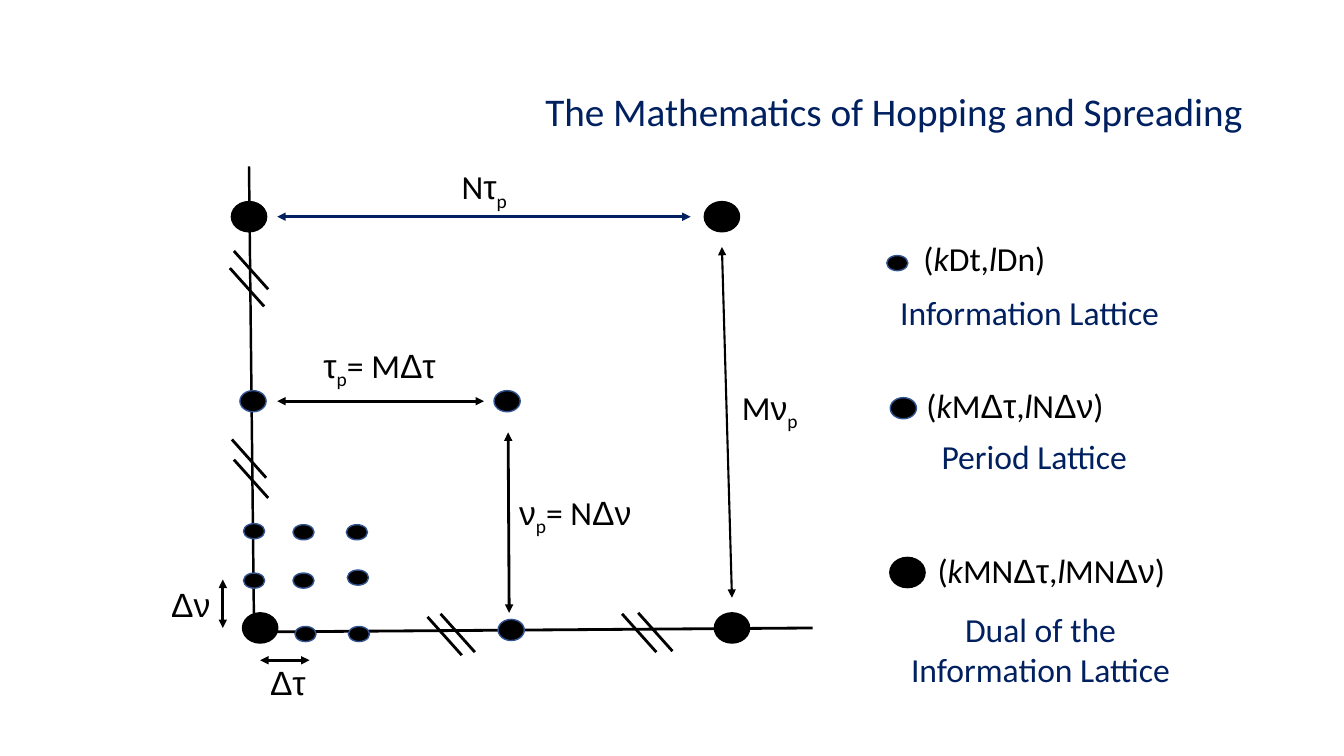
from dataclasses import dataclass

from lxml.etree import SubElement
from pptx import Presentation
from pptx.dml.color import RGBColor
from pptx.enum.shapes import MSO_CONNECTOR, MSO_SHAPE
from pptx.enum.text import MSO_ANCHOR, MSO_AUTO_SIZE, PP_ALIGN
from pptx.oxml.ns import qn
from pptx.util import Inches, Pt


@dataclass(frozen=True)
class Theme:
    navy: RGBColor = RGBColor.from_string("002060")
    black: RGBColor = RGBColor.from_string("000000")
    outline: RGBColor = RGBColor.from_string("325491")
    font: str = "Calibri"
    greek_font: str = "Arial"
    title_size: int = 28
    text_size: int = 24


@dataclass(frozen=True)
class Box:
    left: float
    top: float
    width: float
    height: float

    def point(self, x, y):
        return Inches(self.left + x), Inches(self.top + y)


THEME = Theme()
LABEL_HEIGHT = 0.5
BREAK_WIDTH, BREAK_HEIGHT = 0.34, 0.38
DOT_STYLES = {
    "information": (0.21, 0.15, THEME.outline),
    "period": (0.26, 0.21, THEME.outline),
    "dual": (0.35, 0.3, THEME.black),
}


def add_run(paragraph, text, style="plain", color=THEME.black, size=THEME.text_size):
    run = paragraph.add_run()
    run.text = text
    run.font.size = Pt(size)
    run.font.color.rgb = color
    run.font.name = THEME.greek_font if style == "greek" else THEME.font
    if style == "italic":
        run.font.italic = True
    if style == "subscript":
        run._r.get_or_add_rPr().set("baseline", "-25000")


def add_label(slide, box, x, y, width, runs, color=THEME.black,
              height=LABEL_HEIGHT, alignment=PP_ALIGN.LEFT):
    shape = slide.shapes.add_textbox(*box.point(x, y), Inches(width), Inches(height))
    frame = shape.text_frame
    frame.word_wrap = True
    frame.auto_size = MSO_AUTO_SIZE.SHAPE_TO_FIT_TEXT
    paragraph = frame.paragraphs[0]
    paragraph.alignment = alignment
    for text, style in runs:
        add_run(paragraph, text, style, color)


def add_line(slide, box, start, end, width=2, color=THEME.black, arrows=False):
    connector = slide.shapes.add_connector(
        MSO_CONNECTOR.STRAIGHT, *box.point(*start), *box.point(*end))
    connector.line.width = Pt(width)
    connector.line.color.rgb = color
    properties = connector._element.spPr
    if arrows:
        line = properties.find(qn("a:ln"))
        for tag in ("a:headEnd", "a:tailEnd"):
            SubElement(line, qn(tag), type="triangle")
    SubElement(properties, qn("a:effectLst"))


def add_dot(slide, box, center, lattice):
    width, height, outline = DOT_STYLES[lattice]
    x, y = center
    shape = slide.shapes.add_shape(
        MSO_SHAPE.OVAL, *box.point(x - width / 2, y - height / 2),
        Inches(width), Inches(height))
    shape.shadow.inherit = False
    shape.fill.solid()
    shape.fill.fore_color.rgb = THEME.black
    shape.line.color.rgb = outline
    shape.line.width = Pt(1)


def build_title(slide, box):
    title = slide.shapes.title
    title.left, title.top = box.point(0, 0)
    title.width, title.height = Inches(box.width), Inches(box.height)
    title.text_frame.word_wrap = True
    title.text_frame.vertical_anchor = MSO_ANCHOR.MIDDLE
    paragraph = title.text_frame.paragraphs[0]
    paragraph.alignment = PP_ALIGN.RIGHT
    paragraph.line_spacing = 0.9
    add_run(paragraph, "The Mathematics of Hopping and Spreading",
            color=THEME.navy, size=THEME.title_size)


def build_axes(slide, box):
    add_line(slide, box, (0.87, 0.05), (0.92, 4.65), 1.75)
    add_line(slide, box, (6.46, 4.63), (0.92, 4.67))
    breaks = [
        (0.72, 0.89), (0.68, 1.06), (0.7, 2.76), (0.72, 2.96),
        (2.64, 4.52), (2.77, 4.49), (4.57, 4.49), (4.73, 4.48),
    ]
    for x, y in breaks:
        add_line(slide, box, (x, y), (x + BREAK_WIDTH, y + BREAK_HEIGHT))


def build_lattice(slide, box):
    centers = {
        "dual": [(0.98, 4.63), (0.87, 0.55), (5.56, 0.55), (5.66, 4.63)],
        "period": [(0.91, 2.38), (3.43, 2.38), (3.47, 4.65)],
        "information": [
            (0.92, 3.67), (1.41, 3.68), (1.94, 3.68),
            (0.92, 4.16), (1.41, 4.16), (1.95, 4.13),
            (1.43, 4.69), (1.96, 4.69),
        ],
    }
    for lattice, points in centers.items():
        for center in points:
            add_dot(slide, box, center, lattice)


def build_dimensions(slide, box):
    arrows = [
        ((1.15, 0.55), (5.25, 0.55), 2, THEME.navy),
        ((5.56, 0.85), (5.66, 4.33), 1.5, THEME.black),
        ((1.15, 2.38), (3.2, 2.38), 2, THEME.black),
        ((3.44, 2.69), (3.45, 4.48), 2, THEME.black),
        ((0.61, 4.15), (0.61, 4.63), 2, THEME.black),
        ((0.98, 4.95), (1.47, 4.95), 2, THEME.black),
    ]
    for start, end, width, color in arrows:
        add_line(slide, box, start, end, width, color, arrows=True)
    subscript = ("p", "subscript")
    labels = [
        (2.88, 0, 0.89, [("N", "plain"), ("τ", "greek"), subscript]),
        (5.66, 2.19, 0.89, [("M", "plain"), ("ν", "greek"), subscript]),
        (1.51, 1.77, 1.45,
         [("τ", "greek"), subscript, ("= M", "plain"), ("Δτ", "greek")]),
        (3.45, 3.23, 1.72,
         [("ν", "greek"), subscript, ("= N", "plain"), ("Δν", "greek")]),
        (0, 4.14, 0.59, [("Δν", "greek")]),
        (0.98, 4.92, 0.65, [("Δτ", "greek")]),
    ]
    for x, y, width, runs in labels:
        add_label(slide, box, x, y, width, runs)


def lattice_formula(delay_factor, doppler_factor):
    return [
        ("(", "plain"), ("k", "italic"), (delay_factor, "plain"), ("Δτ", "greek"),
        (",", "plain"), ("l", "italic"), (doppler_factor, "plain"), ("Δν", "greek"),
        (")", "plain"),
    ]


def build_legend(slide, box):
    information_formula = [
        ("(", "plain"), ("k", "italic"), ("Dt,", "plain"),
        ("l", "italic"), ("Dn)", "plain"),
    ]
    entries = [
        ("information", (0.25, 0.31), (0.41, 0.01, 1.61), information_formula),
        ("period", (0.31, 1.75), (0.44, 1.47, 2.03), lattice_formula("M", "N")),
        ("dual", (0.35, 3.38), (0.55, 3.11, 2.71), lattice_formula("MN", "MN")),
    ]
    for lattice, center, place, formula in entries:
        add_dot(slide, box, center, lattice)
        add_label(slide, box, *place, formula)
    names = [
        ((0.18, 0.55, 2.91), "Information Lattice", LABEL_HEIGHT, PP_ALIGN.LEFT),
        ((0.59, 1.98, 2.15), "Period Lattice", LABEL_HEIGHT, PP_ALIGN.LEFT),
        ((0, 3.69, 3.34), "Dual of the Information Lattice", 0.91, PP_ALIGN.CENTER),
    ]
    for place, name, height, alignment in names:
        add_label(slide, box, *place, [(name, "plain")], THEME.navy, height, alignment)


def main():
    presentation = Presentation()
    presentation.slide_width = Inches(13.33)
    presentation.slide_height = Inches(7.5)
    slide = presentation.slides.add_slide(presentation.slide_layouts[5])
    diagram = Box(1.6, 1.6, 6.55, 5.42)
    build_title(slide, Box(5.05, 0.4, 7.37, 1.45))
    build_axes(slide, diagram)
    build_lattice(slide, diagram)
    build_dimensions(slide, diagram)
    build_legend(slide, Box(8.65, 2.3, 3.34, 4.6))
    presentation.save("out.pptx")


if __name__ == "__main__":
    main()
